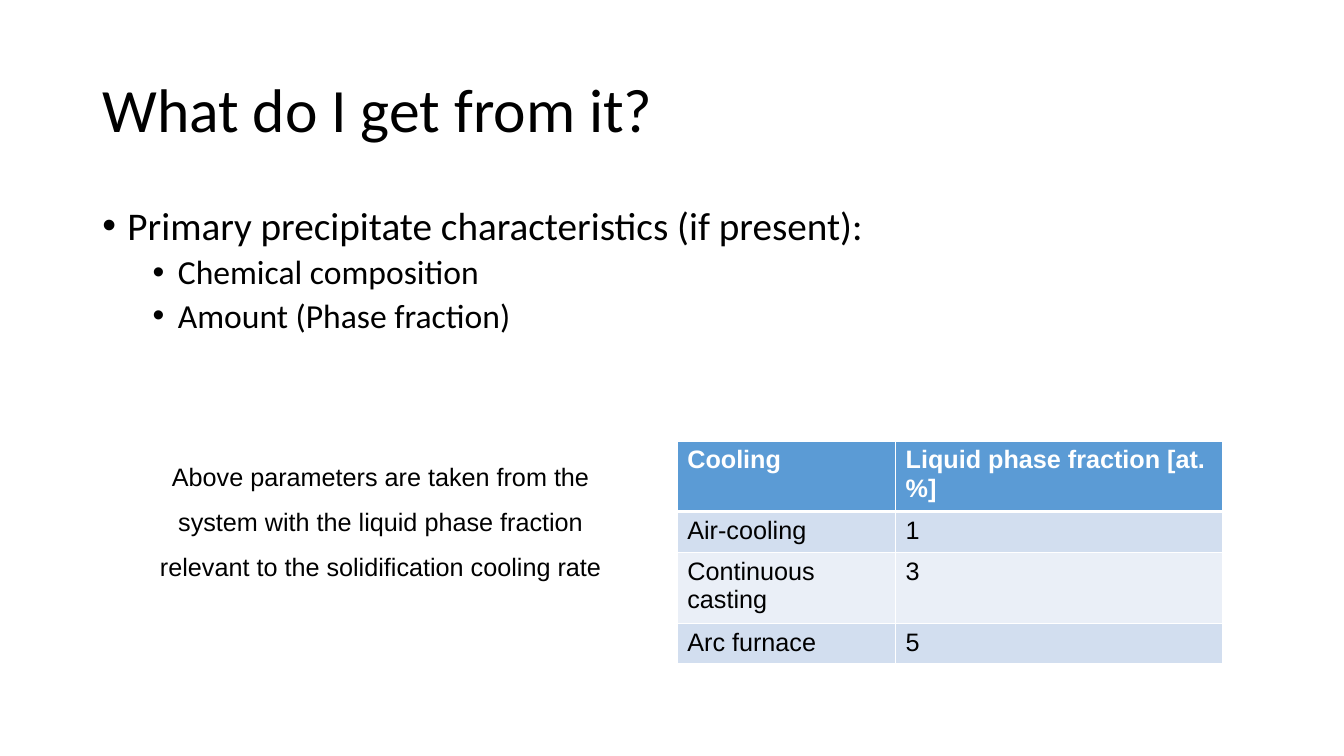
from pptx import Presentation
from pptx.dml.color import RGBColor
from pptx.enum.text import MSO_ANCHOR, PP_ALIGN
from pptx.oxml.ns import qn
from pptx.util import Pt
from lxml.etree import SubElement

SCALE = 9525


def px(size):
    return size * SCALE


def tint(code):
    return RGBColor.from_string(code)


def write(para, text, size=18, face="Arial", color="000000", bold=False,
          align=PP_ALIGN.LEFT, lead=1.0, before=0, bullet=False, level=0):
    para.level = level
    if bullet:
        props = para._p.get_or_add_pPr()
        props.set("marL", str(px(24 + 48 * level)))
        props.set("indent", str(px(-24)))
        SubElement(props, qn("a:buFont"), typeface="Arial")
        SubElement(props, qn("a:buChar"), char="•")
    para.alignment = align
    para.line_spacing = lead
    para.space_before = Pt(before)
    run = para.add_run()
    run.text = text
    font = run.font
    font.size, font.name, font.bold = Pt(size), face, bold
    font.color.rgb = tint(color)


class Deck:
    head = "5B9BD5"
    bands = ("D2DEEF", "EAEFF7")
    white = "FFFFFF"

    def __init__(self, wide, high):
        self.show = Presentation()
        self.show.slide_width, self.show.slide_height = px(wide), px(high)
        self.slide = self.show.slides.add_slide(self.show.slide_layouts[6])

    def text(self, box, items, anchor=MSO_ANCHOR.TOP, **style):
        frame = self.slide.shapes.add_textbox(*map(px, box)).text_frame
        frame.word_wrap = True
        frame.vertical_anchor = anchor
        for i, (line, extra) in enumerate(items):
            para = frame.add_paragraph() if i else frame.paragraphs[0]
            write(para, line, **style, **extra)

    def edge(self, cell, side, width):
        props = cell._tc.get_or_add_tcPr()
        line = SubElement(props, qn("a:ln" + side), w=str(Pt(width)))
        fill = SubElement(line, qn("a:solidFill"))
        SubElement(fill, qn("a:srgbClr"), val=self.white)

    def table(self, left, top, cols, high, rows):
        shape = self.slide.shapes.add_table(
            len(rows), len(cols), px(left), px(top),
            px(sum(cols)), px(high * len(rows)))
        grid = shape.table
        for col, wide in zip(grid.columns, cols):
            col.width = px(wide)
        for r, row in enumerate(rows):
            top_row = r == 0
            fill = self.head if top_row else self.bands[(r - 1) % 2]
            for c, value in enumerate(row):
                cell = grid.cell(r, c)
                for side in "LRTB":
                    thick = (r, side) in ((0, "B"), (1, "T"))
                    self.edge(cell, side, 3 if thick else 1)
                cell.fill.solid()
                cell.fill.fore_color.rgb = tint(fill)
                write(cell.text_frame.paragraphs[0], value, bold=top_row,
                      color=self.white if top_row else "000000")


def main():
    deck = Deck(1280, 720)
    deck.text((88, 38, 1104, 139), [("What do I get from it?", {})],
              anchor=MSO_ANCHOR.MIDDLE, size=44, face="Calibri", lead=0.9)
    sub = {"size": 24, "level": 1, "before": 5}
    deck.text((88, 192, 1104, 457), [
        ("Primary precipitate characteristics (if present):", {"size": 28}),
        ("Chemical composition", sub),
        ("Amount (Phase fraction)", sub),
    ], face="Calibri", lead=0.9, bullet=True)
    deck.table(645, 420, (208, 311), 39, [
        ("Cooling", "Liquid phase fraction [at. %]"),
        ("Air-cooling", "1"),
        ("Continuous casting", "3"),
        ("Arc furnace", "5"),
    ])
    deck.text((133, 420, 459, 140), [
        ("Above parameters are taken from the system with the liquid phase "
         "fraction relevant to the solidification cooling rate", {}),
    ], align=PP_ALIGN.CENTER, lead=1.5)
    deck.show.save("out.pptx")


if __name__ == "__main__":
    main()
